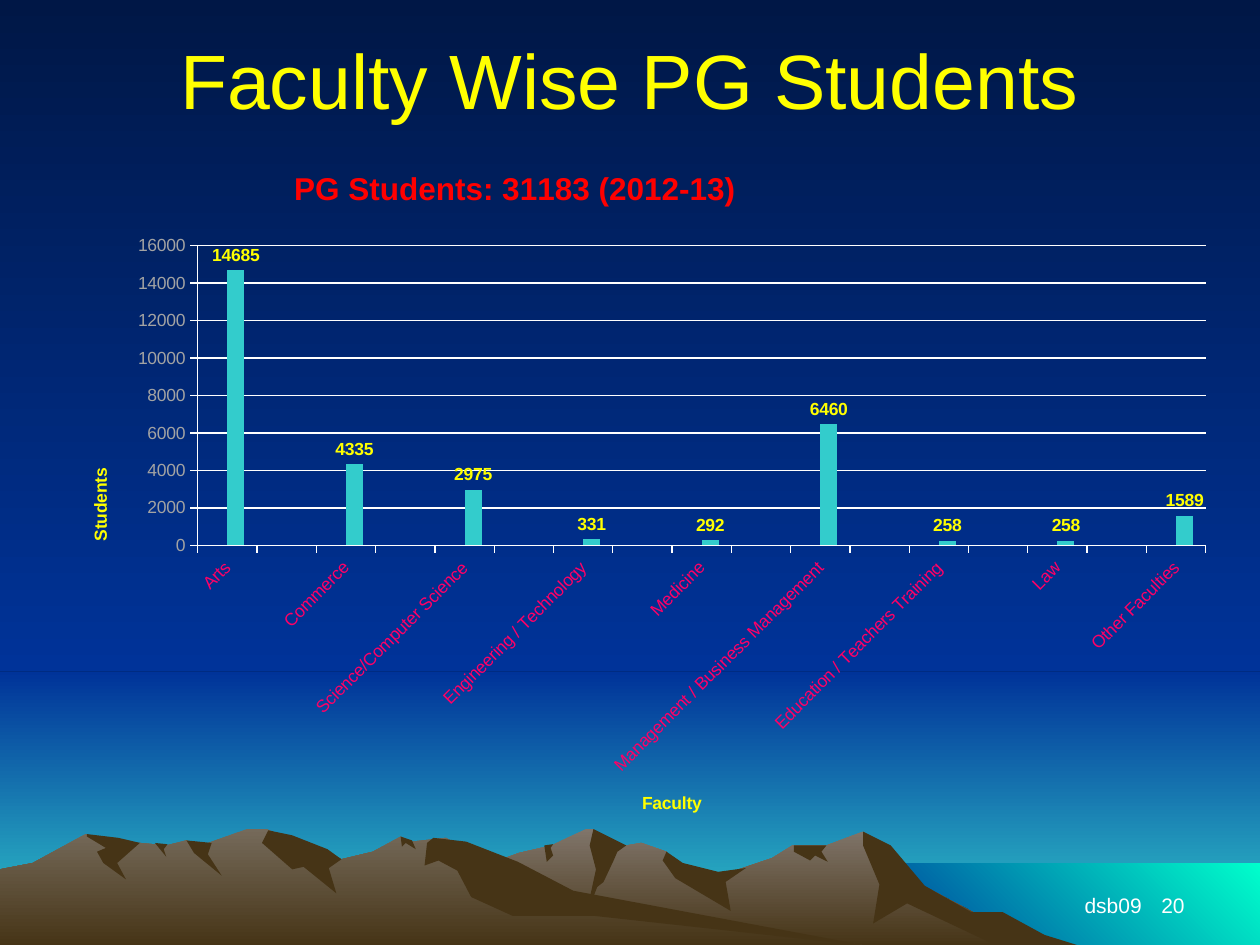
import pptx
import pptx.chart.data
import pptx.dml.color
import pptx.enum.chart
import pptx.enum.shapes
import pptx.enum.text
import pptx.oxml
import pptx.oxml.ns
import pptx.util

Inches = pptx.util.Inches
qn = pptx.oxml.ns.qn
ALIGN = pptx.enum.text.PP_ALIGN
ANCHOR = pptx.enum.text.MSO_ANCHOR

FONT = "Arial"
YELLOW, WHITE, BROWN = "FFFF00", "FFFFFF", "463416"
NIGHT, BLUE = "001746", "003399"
DOWN, UP_RIGHT = 270, 45

SLIDE_WIDTH, SLIDE_HEIGHT = 10, 7.5
HORIZON, SHORE_LEFT, SHORE_TOP, GROUND = 5.33, 6.83, 6.85, 7.51

SKY_AND_SEA = {
    "low sky": ((0, HORIZON, SLIDE_WIDTH, SLIDE_HEIGHT - HORIZON), (BLUE, "33CCCC", DOWN)),
    "high sky": ((0, 0, SLIDE_WIDTH, HORIZON), (NIGHT, BLUE, DOWN)),
    "sea": ((SHORE_LEFT, SHORE_TOP, SLIDE_WIDTH - SHORE_LEFT, 0.67), (BLUE, "00FFCC", UP_RIGHT)),
}

RIGHT_RANGE = {
    "paint": ("80756A", BROWN, DOWN),
    "ridge": [
        (2.58, GROUND), (3.27, 7.09), (3.55, 6.98), (4.12, 6.77), (4.38, 6.71), (4.65, 6.58),
        (4.71, 6.58), (4.86, 6.73), (5.09, 6.69), (5.29, 6.76), (5.36, 6.9), (5.66, 6.97),
        (6.13, 6.81), (6.29, 6.71), (6.56, 6.71), (6.85, 6.6), (7.02, 6.71), (7.23, 6.98),
        (7.78, 7.27), (8.21, GROUND),
    ],
    "shadows": {
        "east slope": [
            (6.85, 6.6), (7.07, 6.71), (7.34, 7.03), (7.71, 7.24), (7.96, 7.24), (8.29, 7.42),
            (8.58, GROUND), (7.92, GROUND), (7.2, 7.17), (6.93, 7.33), (6.98, 7.02), (6.85, 6.71),
        ],
        "central peak": [
            (4.71, 6.58), (4.97, 6.71), (4.9, 6.76), (4.87, 6.83), (4.79, 7), (4.74, 7.04),
            (4.65, 7.27), (4.73, 6.9), (4.68, 6.71),
        ],
        "saddle": [
            (5.29, 6.76), (5.42, 6.85), (5.7, 6.92), (5.92, 6.89), (5.76, 7), (5.8, 7.23),
            (5.36, 6.97), (5.26, 6.83),
        ],
        "east notch": [
            (6.3, 6.71), (6.56, 6.71), (6.52, 6.76), (6.57, 6.84), (6.47, 6.79), (6.43, 6.83),
            (6.3, 6.76),
        ],
        "west notch": [(4.32, 6.71), (4.39, 6.7), (4.37, 6.73), (4.39, 6.79), (4.34, 6.84)],
    },
}

LEFT_RANGE = {
    "paint": ("756A5A", BROWN, DOWN),
    "ridge": [
        (0, GROUND), (0, 6.9), (0.26, 6.85), (0.68, 6.62), (0.94, 6.71), (1.11, 6.69),
        (1.32, 6.71), (1.48, 6.67), (1.6, 6.71), (1.96, 6.58), (2.12, 6.58), (2.23, 6.63),
        (2.36, 6.81), (2.6, 6.76), (2.71, 6.82), (2.96, 6.76), (3.18, 6.64), (3.27, 6.68),
        (3.54, 6.65), (4.32, 7.12), (6.9, GROUND),
    ],
    "shadows": {
        "middle peak": [
            (2.13, 6.59), (2.32, 6.63), (2.6, 6.74), (2.71, 6.82), (2.61, 6.89), (2.67, 7.09),
            (2.41, 6.88), (2.32, 6.9), (2.08, 6.69),
        ],
        "long slope": [
            (3.39, 6.69), (3.44, 6.65), (3.7, 6.68), (4.11, 6.84), (4.55, 7.07), (6.9, GROUND),
            (4.72, 7.27), (4.07, 7.27), (3.74, 7.12), (3.63, 6.91), (3.48, 6.83), (3.37, 6.87),
        ],
        "crest": [(3.18, 6.64), (3.27, 6.67), (3.3, 6.74), (3.22, 6.69), (3.19, 6.72)],
        "gully": [(1.48, 6.67), (1.68, 6.69), (1.65, 6.78), (1.76, 6.95), (1.54, 6.77)],
        "cleft": [(1.23, 6.69), (1.33, 6.7), (1.3, 6.74), (1.32, 6.8)],
        "west peak": [
            (0.69, 6.62), (0.94, 6.65), (1.11, 6.69), (0.93, 6.85), (1, 6.98), (0.82, 6.85),
            (0.77, 6.76), (0.84, 6.73), (0.69, 6.64),
        ],
    },
}

TEXTS = [
    ("Faculty Wise PG Students", (0.5, 0.25, 9, 0.75), 44, YELLOW, ALIGN.CENTER, ANCHOR.MIDDLE),
    ("dsb09", (8.5, 6.83, 0.67, 0.5), 12, WHITE, ALIGN.CENTER, ANCHOR.BOTTOM),
    ("20", (8.92, 6.83, 0.58, 0.5), 12, WHITE, ALIGN.RIGHT, ANCHOR.BOTTOM),
]

CHART_BOX = (0.5, 1.17, 9.25, 5.5)
PLOT_BOX = (1.07, 0.78, 8, 2.38)
STUDENTS = {
    "Arts": 14685,
    "Commerce": 4335,
    "Science/Computer Science": 2975,
    "Engineering / Technology": 331,
    "Medicine": 292,
    "Management / Business Management": 6460,
    "Education / Teachers Training": 258,
    "Law": 258,
    "Other Faculties": 1589,
}


def rgb(color):
    return pptx.dml.color.RGBColor.from_string(color)


def set_fill(fill, paint):
    if isinstance(paint, str):
        fill.solid()
        fill.fore_color.rgb = rgb(paint)
        return
    *colors, angle = paint
    fill.gradient()
    fill.gradient_angle = angle
    for position, (stop, color) in enumerate(zip(fill.gradient_stops, colors)):
        stop.position = position
        stop.color.rgb = rgb(color)


def set_font(font, size, color, bold=False):
    font.name = FONT
    font.size = pptx.util.Pt(size)
    font.bold = bold
    font.color.rgb = rgb(color)


def paint_shape(shape, paint):
    shape.shadow.inherit = False
    shape.line.fill.background()
    set_fill(shape.fill, paint)


def add_outline(slide, points, paint):
    corners = [(Inches(x), Inches(y)) for x, y in points]
    builder = slide.shapes.build_freeform(*corners[0])
    builder.add_line_segments(corners[1:], close=True)
    paint_shape(builder.convert_to_shape(), paint)


def add_scenery(slide):
    rectangle = pptx.enum.shapes.MSO_SHAPE.RECTANGLE
    for box, paint in SKY_AND_SEA.values():
        paint_shape(slide.shapes.add_shape(rectangle, *map(Inches, box)), paint)
    for mountains in (RIGHT_RANGE, LEFT_RANGE):
        add_outline(slide, mountains["ridge"], mountains["paint"])
        for shadow in mountains["shadows"].values():
            add_outline(slide, shadow, BROWN)


def add_text(slide, text, box, size, color, alignment, anchor):
    frame = slide.shapes.add_textbox(*map(Inches, box)).text_frame
    frame.word_wrap = True
    frame.vertical_anchor = anchor
    paragraph = frame.paragraphs[0]
    paragraph.text = text
    paragraph.alignment = alignment
    set_font(paragraph.font, size, color)


def set_layout(element, box, target=""):
    for old in element.findall(qn("c:layout")):
        element.remove(old)
    settings = [("layoutTarget", target)] if target else []
    settings += [("xMode", "edge"), ("yMode", "edge")]
    settings += [(name, length / CHART_BOX[2 + index % 2])
                 for index, (name, length) in enumerate(zip("xywh", box))]
    children = "".join(f'<c:{name} val="{value}"/>' for name, value in settings)
    namespace = pptx.oxml.ns.nsdecls("c")
    layout = pptx.oxml.parse_xml(
        f"<c:layout {namespace}><c:manualLayout>{children}</c:manualLayout></c:layout>")
    element.insert(0 if element.find(qn("c:tx")) is None else 1, layout)


def set_title(title, text, size, color, corner):
    paragraph = title.text_frame.paragraphs[0]
    paragraph.text = text
    set_font(paragraph.font, size, color, bold=True)
    set_layout(title._element, corner)


def style_columns(plot):
    plot.vary_by_categories = False
    plot.gap_width, plot.overlap = 150, 0
    for series, color in zip(plot.series, ("3399FF", "33CCCC")):
        set_fill(series.format.fill, color)
        series.invert_if_negative = False
    labels = plot.series[1].data_labels
    labels.show_value = True
    labels.number_format, labels.number_format_is_linked = "0", False
    labels.position = pptx.enum.chart.XL_LABEL_POSITION.OUTSIDE_END
    set_font(labels.font, 10, YELLOW, bold=True)


def style_axes(faculties, counts):
    for axis, title, color, corner in [
        (faculties, "Faculty", "FF0066", (4.57, 5.09)),
        (counts, "Students", "A3A3A3", (0.18, 2.52)),
    ]:
        set_title(axis.axis_title, title, 10, YELLOW, corner)
        set_font(axis.tick_labels.font, 10, color)
        axis.major_tick_mark = pptx.enum.chart.XL_TICK_MARK.OUTSIDE
        axis.format.line.color.rgb = rgb(WHITE)
    counts.axis_title.text_frame._txBody.bodyPr.set("rot", "-5400000")
    faculties._element.txPr.bodyPr.set("rot", "-2700000")
    counts.minimum_scale, counts.maximum_scale, counts.major_unit = 0, 16000, 2000
    counts.has_major_gridlines = True
    counts.major_gridlines.format.line.color.rgb = rgb(WHITE)


def add_student_chart(slide):
    slot_count = 2 * len(STUDENTS) - 1
    categories, values = [""] * slot_count, [None] * slot_count
    categories[::2], values[::2] = STUDENTS.keys(), STUDENTS.values()
    data = pptx.chart.data.CategoryChartData(number_format="0")
    data.categories = categories
    data.add_series("Series 1", [None] * slot_count)
    data.add_series("Series 2", values)
    kind = pptx.enum.chart.XL_CHART_TYPE.COLUMN_CLUSTERED
    chart = slide.shapes.add_chart(kind, *map(Inches, CHART_BOX), data).chart
    set_font(chart.font, 10, WHITE)
    chart.has_legend = False
    set_title(chart.chart_title, "PG Students: 31183 (2012-13)", 18, "FF0000", (1.79, 0.12))
    set_layout(chart._chartSpace.chart.plotArea, PLOT_BOX, "inner")
    style_columns(chart.plots[0])
    style_axes(chart.category_axis, chart.value_axis)


def main():
    presentation = pptx.Presentation()
    presentation.slide_width = Inches(SLIDE_WIDTH)
    presentation.slide_height = Inches(SLIDE_HEIGHT)
    slide = presentation.slides.add_slide(presentation.slide_layouts[6])
    set_fill(slide.background.fill, (NIGHT, BLUE, DOWN))
    add_scenery(slide)
    for text in TEXTS:
        add_text(slide, *text)
    add_student_chart(slide)
    presentation.save("out.pptx")


if __name__ == "__main__":
    main()
